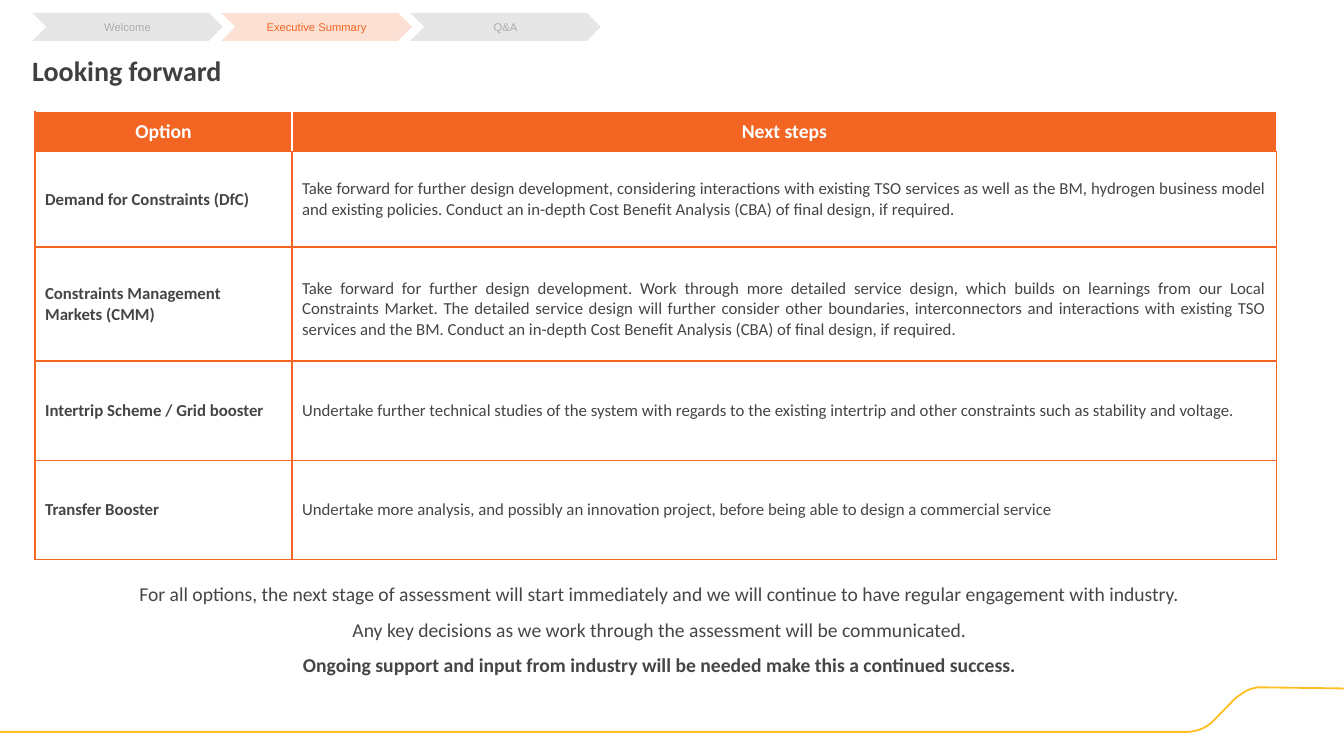
from dataclasses import dataclass
from itertools import product

from lxml import etree
from pptx import Presentation
from pptx.dml.color import RGBColor
from pptx.dml.fill import FillFormat
from pptx.enum.shapes import MSO_SHAPE
from pptx.enum.text import MSO_ANCHOR, MSO_AUTO_SIZE, PP_ALIGN
from pptx.oxml.ns import qn
from pptx.slide import Slide
from pptx.table import _Cell
from pptx.text.text import TextFrame, _Paragraph
from pptx.util import Pt

CHEVRON = MSO_SHAPE.CHEVRON
TOP, MIDDLE = MSO_ANCHOR.TOP, MSO_ANCHOR.MIDDLE
LEFT, CENTER, JUSTIFY = PP_ALIGN.LEFT, PP_ALIGN.CENTER, PP_ALIGN.JUSTIFY
NO_AUTOFIT = MSO_AUTO_SIZE.NONE

ORANGE, PEACH, YELLOW, WHITE = "F26522", "FCE0D3", "FFBF22", "FFFFFF"
INK, TITLE_INK, SILVER, GREY = "454546", "404040", "E7E6E6", "AFABAB"


@dataclass(frozen=True)
class Stage:
    label: str
    fill: str = SILVER
    ink: str = GREY


@dataclass(frozen=True)
class Option:
    name: str
    next_steps: str
    height: float
    top_inset: float = 3.6


STAGES = [
    Stage("Welcome"),
    Stage("Executive Summary", PEACH, ORANGE),
    Stage("Q&A"),
]
OPTIONS = [
    Option(
        "Demand for Constraints (DfC)",
        "Take forward for further design development, considering interactions with existing TSO "
        "services as well as the BM, hydrogen business model and existing policies. Conduct an "
        "in-depth Cost Benefit Analysis (CBA) of final design, if required.",
        68.2,
    ),
    Option(
        "Constraints Management Markets (CMM)",
        "Take forward for further design development. Work through more detailed service design, "
        "which builds on learnings from our Local Constraints Market. The detailed service "
        "design will further consider other boundaries, interconnectors and interactions with "
        "existing TSO services and the BM. Conduct an in-depth Cost Benefit Analysis (CBA) of "
        "final design, if required.",
        81.4,
        11,
    ),
    Option(
        "Intertrip Scheme / Grid booster",
        "Undertake further technical studies of the system with regards to the existing intertrip "
        "and other constraints such as stability and voltage.",
        71,
    ),
    Option(
        "Transfer Booster",
        "Undertake more analysis, and possibly an innovation project, before being able to design "
        "a commercial service",
        71,
    ),
]
CLOSING = [
    "For all options, the next stage of assessment will start immediately and we will continue to "
    "have regular engagement with industry.",
    "Any key decisions as we work through the assessment will be communicated.",
    "Ongoing support and input from industry will be needed make this a continued success.",
]
FOOTER_CURVE = [
    (960, 491.8), (902, 491), (898.5, 491), (895.5, 491.6), (892.8, 492.4), (890.5, 493.4),
    (887.8, 495), (885.5, 496.6), (882.7, 498.5), (867, 514.6), (864.7, 516.8), (862.5, 518.4),
    (859.7, 520), (856.8, 521.2), (854, 522), (851, 522.6), (848, 522.8), (0, 522.8),
]


def apply(target: object, values: dict) -> None:
    for attribute, value in values.items():
        setattr(target, attribute, value)


def place(target: object, left: float, top: float, width: float, height: float) -> None:
    apply(target, {"left": Pt(left), "top": Pt(top), "width": Pt(width), "height": Pt(height)})


def paint(fill: FillFormat, color: str) -> None:
    fill.solid()
    fill.fore_color.rgb = RGBColor.from_string(color)


def write(paragraph: _Paragraph, text: str, size: float, color: str, align: PP_ALIGN,
          bold: bool = False, face: str = "Calibri") -> None:
    run = paragraph.add_run()
    run.text = text
    paragraph.alignment = align
    apply(run.font, {"name": face, "size": Pt(size), "bold": bold})
    paint(run.font.fill, color)


def set_frame(frame: TextFrame, anchor: MSO_ANCHOR, side: float = 0, edge: float = 0) -> None:
    apply(frame, {
        "word_wrap": True, "auto_size": NO_AUTOFIT, "vertical_anchor": anchor,
        "margin_left": Pt(side), "margin_right": Pt(side),
        "margin_top": Pt(edge), "margin_bottom": Pt(edge),
    })


def draw_footer_curve(slide: Slide) -> None:
    points = [(Pt(x), Pt(y)) for x, y in FOOTER_CURVE]
    builder = slide.shapes.build_freeform(*points[0])
    builder.add_line_segments(points[1:], close=False)
    curve = builder.convert_to_shape()
    curve.shadow.inherit = False
    curve.fill.background()
    paint(curve.line.fill, YELLOW)
    curve.line.width = Pt(1.3)


def draw_stages(slide: Slide) -> None:
    for index, stage in enumerate(STAGES):
        chevron = slide.shapes.add_shape(CHEVRON, Pt(23 + 135 * index), Pt(9.2), Pt(136.2), Pt(20))
        chevron.shadow.inherit = False
        paint(chevron.fill, stage.fill)
        chevron.line.fill.background()
        set_frame(chevron.text_frame, MIDDLE)
        write(chevron.text_frame.paragraphs[0], stage.label, 8, stage.ink, CENTER, face="Arial")


def set_borders(cell: _Cell, left: str, right: str, top: str, bottom: str) -> None:
    properties = cell._tc.get_or_add_tcPr()
    for side, color in zip("LRTB", (left, right, top, bottom)):
        border = etree.SubElement(properties, qn(f"a:ln{side}"), w=str(Pt(1)))
        solid = etree.SubElement(border, qn("a:solidFill"))
        etree.SubElement(solid, qn("a:srgbClr"), val=color)


def draw_options(slide: Slide) -> None:
    heights = [28.8] + [option.height for option in OPTIONS]
    widths = [183.6, 703.4]
    table = slide.shapes.add_table(
        len(heights), len(widths), Pt(25), Pt(79.5), Pt(sum(widths)), Pt(sum(heights))
    ).table
    apply(table, {"first_row": False, "horz_banding": False})
    for column, width in zip(table.columns, widths):
        column.width = Pt(width)
    for row, height in zip(table.rows, heights):
        row.height = Pt(height)

    for column, heading in enumerate(("Option", "Next steps")):
        cell = table.cell(0, column)
        set_borders(cell, WHITE if column else ORANGE, WHITE, WHITE, ORANGE)
        paint(cell.fill, ORANGE)
        cell.vertical_anchor = MIDDLE
        write(cell.text_frame.paragraphs[0], heading, 14, WHITE, CENTER, True)

    for (row, option), column in product(enumerate(OPTIONS, 1), range(2)):
        cell = table.cell(row, column)
        set_borders(cell, ORANGE, ORANGE, ORANGE, ORANGE)
        cell.vertical_anchor = MIDDLE
        paragraph = cell.text_frame.paragraphs[0]
        if column:
            paint(cell.fill, WHITE)
            cell.margin_top = Pt(option.top_inset)
            write(paragraph, option.next_steps, 12, INK, JUSTIFY)
        else:
            cell.fill.background()
            write(paragraph, option.name, 12, INK, LEFT, True)


def fill_placeholders(slide: Slide) -> None:
    title, closing = slide.placeholders
    place(title, 23, 38.2, 854.6, 20.2)
    set_frame(title.text_frame, TOP)
    write(title.text_frame.paragraphs[0], "Looking forward", 20, TITLE_INK, LEFT, True)

    place(closing, 23, 404, 889.2, 80.6)
    frame = closing.text_frame
    set_frame(frame, TOP, 7.2, 3.6)
    for index, statement in enumerate(CLOSING):
        paragraph = frame.add_paragraph() if index else frame.paragraphs[0]
        properties = paragraph._p.get_or_add_pPr()
        apply(paragraph, {"line_spacing": 1.5, "space_before": Pt(0), "space_after": Pt(0)})
        etree.SubElement(properties, qn("a:buNone"))
        properties.set("marL", str(Pt(7.2)))
        properties.set("indent", "0")
        write(paragraph, statement, 14, INK, CENTER, statement == CLOSING[-1])


def main() -> None:
    deck = Presentation()
    apply(deck, {"slide_width": Pt(960), "slide_height": Pt(540)})
    slide = deck.slides.add_slide(deck.slide_layouts[1])
    draw_footer_curve(slide)
    draw_options(slide)
    fill_placeholders(slide)
    draw_stages(slide)
    deck.save("out.pptx")


if __name__ == "__main__":
    main()
